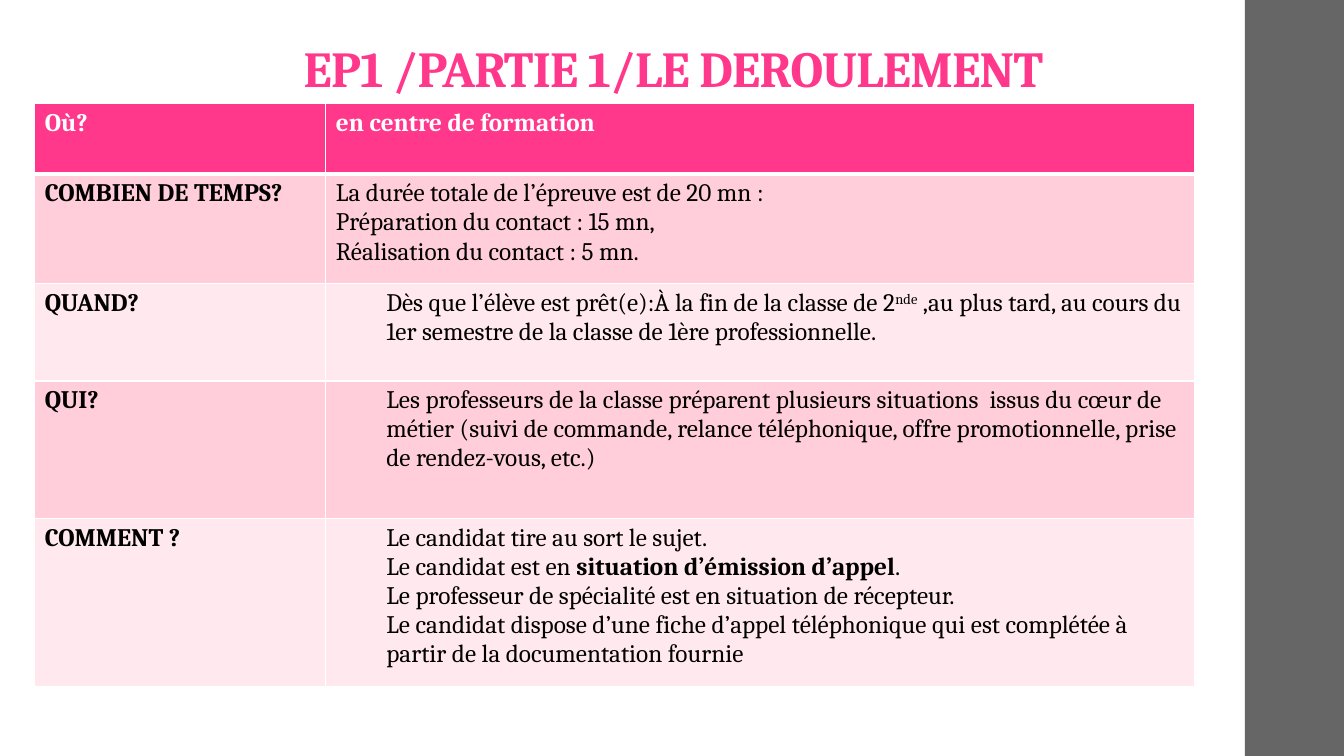
from pptx import Presentation
from pptx.dml.color import RGBColor
from pptx.enum.shapes import MSO_SHAPE
from pptx.enum.text import MSO_ANCHOR, MSO_AUTO_SIZE, PP_ALIGN
from pptx.oxml import parse_xml
from pptx.oxml.ns import nsdecls
from pptx.util import Pt

RECTANGLE = MSO_SHAPE.RECTANGLE
BOTTOM = MSO_ANCHOR.BOTTOM
NO_AUTO_SIZE = MSO_AUTO_SIZE.NONE
CENTER = PP_ALIGN.CENTER

TITLE_ONLY = 5
FONT = "Cambria"
PINK, WHITE, BLACK, GREY = "FF388C", "FFFFFF", "000000", "666666"
BANDS = ("FFCEDA", "FFE8EE")
COLUMN_WIDTHS = (208, 620.6)
ROW_HEIGHTS = (50.2, 78.4, 69.4, 98.4, 120.2)
INDENT = 36

# Each answer is a list of paragraphs; each paragraph is a list of (text, format) pairs.
ROWS = [
    ("Où?", 0, [[("en centre de formation", {"bold": True})]]),
    ("COMBIEN DE TEMPS?", 0, [
        [("La durée totale de l’épreuve est de 20 mn :", {})],
        [("Préparation du contact : 15 mn,", {})],
        [("Réalisation du contact : 5 mn.", {})],
    ]),
    ("QUAND?", INDENT, [[
        ("Dès que l’élève est prêt(e):À la fin de la classe de 2", {}),
        ("nde", {"baseline": 30}),
        (" ,au plus tard, au cours du 1er semestre de la classe de 1ère professionnelle.", {}),
    ]]),
    ("QUI?", INDENT, [[
        ("Les professeurs de la classe préparent plusieurs situations  issus du cœur de métier "
         "(suivi de commande, relance téléphonique, offre promotionnelle, prise de rendez-vous, "
         "etc.)", {}),
    ]]),
    ("COMMENT ?", INDENT, [
        [("Le candidat tire au sort le sujet.", {})],
        [("Le candidat est en ", {}), ("situation d’émission d’appel", {"bold": True}), (".", {})],
        [("Le professeur de spécialité est en situation de récepteur.", {})],
        [("Le candidat dispose d’une fiche d’appel téléphonique qui est complétée à partir de "
          "la documentation fournie", {})],
    ]),
]


def color(value):
    return RGBColor.from_string(value)


def add_text(para, text, size=18, bold=False, fill=BLACK, baseline=0, spacing=0):
    """Add a span; baseline is in percent and letter spacing in points."""
    span = para.add_run()
    span.text = text
    span.font.name = FONT
    span.font.size = Pt(size)
    span.font.bold = bold
    span.font.color.rgb = color(fill)
    properties = span.font._element
    if baseline:
        properties.set("baseline", str(baseline * 1000))
    if spacing:
        properties.set("spc", str(int(spacing * 100)))


def add_side_band(page):
    band = page.shapes.add_shape(RECTANGLE, Pt(889.2), Pt(0), Pt(70.8), Pt(540))
    band.shadow.inherit = False
    band.fill.solid()
    band.fill.fore_color.rgb = color(GREY)
    band.line.fill.background()


def set_title(page, text):
    title = page.shapes.title
    title.left, title.top, title.width, title.height = Pt(99.4), Pt(20.9), Pt(763.2), Pt(53.3)
    frame = title.text_frame
    frame.word_wrap = True
    frame.auto_size = NO_AUTO_SIZE
    frame.vertical_anchor = BOTTOM
    frame.margin_left = frame.margin_right = Pt(7.2)
    frame.margin_top, frame.margin_bottom = Pt(2.2), Pt(3.6)
    para = frame.paragraphs[0]
    para.alignment = CENTER
    para.line_spacing = 0.9
    add_text(para, text, size=36, bold=True, fill=PINK, spacing=-0.5)


def set_borders(cell, **widths):
    """Draw white borders; the keywords are L, R, T and B with widths in points."""
    properties = cell._tc.get_or_add_tcPr()
    for position, (side, width) in enumerate(widths.items()):
        properties.insert(position, parse_xml(
            f'<a:ln{side} {nsdecls("a")} w="{Pt(width)}"><a:solidFill>'
            f'<a:srgbClr val="{WHITE}"/></a:solidFill></a:ln{side}>'))


def fill_cell(cell, paragraphs, fill, text_fill, indent=0):
    cell.fill.solid()
    cell.fill.fore_color.rgb = color(fill)
    frame = cell.text_frame
    for number, spans in enumerate(paragraphs):
        para = frame.add_paragraph() if number else frame.paragraphs[0]
        if indent:
            para.level = 1
            properties = para._p.get_or_add_pPr()
            properties.set("marL", str(Pt(indent)))
            properties.set("indent", "0")
        for text, text_format in spans:
            add_text(para, text, fill=text_fill, **text_format)


def add_schedule_table(page):
    frame = page.shapes.add_table(len(ROWS), len(COLUMN_WIDTHS), Pt(24.8), Pt(74.2),
                                  Pt(sum(COLUMN_WIDTHS)), Pt(sum(ROW_HEIGHTS)))
    table = frame.table
    for column, width in zip(table.columns, COLUMN_WIDTHS):
        column.width = Pt(width)
    for number, (question, indent, answer) in enumerate(ROWS):
        table.rows[number].height = Pt(ROW_HEIGHTS[number])
        header = number == 0
        fill = PINK if header else BANDS[(number - 1) % 2]
        text_fill = WHITE if header else BLACK
        question_cell, answer_cell = table.rows[number].cells
        fill_cell(question_cell, [[(question, {"bold": True})]], fill, text_fill)
        fill_cell(answer_cell, answer, fill, text_fill, indent)
        for cell in (question_cell, answer_cell):
            set_borders(cell, L=1, R=1, T=3 if number == 1 else 1, B=3 if header else 1)


def main():
    deck = Presentation()
    deck.slide_width, deck.slide_height = Pt(960), Pt(540)
    page = deck.slides.add_slide(deck.slide_layouts[TITLE_ONLY])
    add_side_band(page)
    set_title(page, "EP1 /PARTIE 1/LE DEROULEMENT")
    add_schedule_table(page)
    deck.save("out.pptx")


if __name__ == "__main__":
    main()
